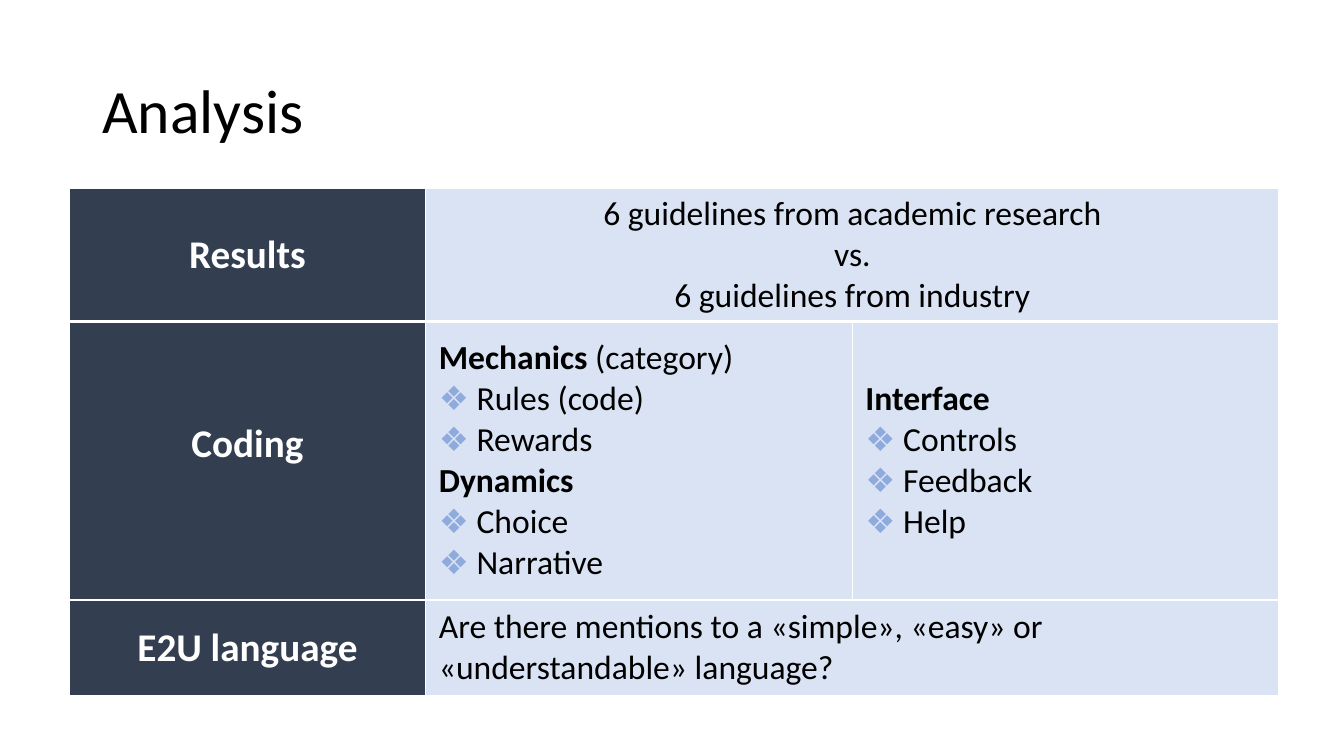
import pptx
import pptx.util
import pptx.dml.color
import pptx.enum.text
import pptx.oxml.ns
import lxml.etree

Cm, Pt = pptx.util.Cm, pptx.util.Pt
ALIGN = pptx.enum.text.PP_ALIGN
MIDDLE = pptx.enum.text.MSO_ANCHOR.MIDDLE
qn = pptx.oxml.ns.qn

FONT = "Calibri"
COLORS = {"dark": "333F50", "light": "DAE3F3", "bullet": "8FAADC",
          "white": "FFFFFF", "black": "000000"}
TITLE = "Analysis"
HEADINGS = ["Results", "Coding", "E2U language"]
RESULTS = ["6 guidelines from academic research", "vs.", "6 guidelines from industry"]
GAME_CODES = [("Mechanics", " (category)", ["Rules (code)", "Rewards"]),
              ("Dynamics", "", ["Choice", "Narrative"])]
INTERFACE_CODES = [("Interface", "", ["Controls", "Feedback", "Help"])]
LANGUAGE = ["Are there mentions to a «simple», «easy» or «understandable» language?"]

COL_WIDTHS = [8.99, 10.75, 10.75]
ROW_HEIGHTS = [3.36, 7.02, 2.42]
INDENT = Cm(0.95)
THIN, THICK = Pt(1), Pt(2.25)
CODING_LIFT = 0.86


def rgb(name):
    return pptx.dml.color.RGBColor.from_string(COLORS[name])


def add_run(p, text, size, color="black", bold=False):
    r = p.add_run()
    r.text = text
    r.font.name, r.font.size, r.font.bold = FONT, Pt(size), bold
    r.font.color.rgb = rgb(color)


def next_paragraph(tf):
    return tf.paragraphs[0] if not tf.paragraphs[0].runs else tf.add_paragraph()


def add_lines(tf, lines, size=24, align=ALIGN.LEFT, color="black", bold=False):
    for line in lines:
        p = next_paragraph(tf)
        p.alignment = align
        add_run(p, line, size, color, bold)


def set_bullet(p):
    pPr = p._p.get_or_add_pPr()
    pPr.set("marL", str(INDENT))
    pPr.set("indent", str(-INDENT))
    clr = lxml.etree.SubElement(pPr, qn("a:buClr"))
    lxml.etree.SubElement(clr, qn("a:srgbClr"), val=COLORS["bullet"])
    lxml.etree.SubElement(pPr, qn("a:buFont"), typeface=FONT)
    lxml.etree.SubElement(pPr, qn("a:buChar"), char="❖")


def add_codes(tf, groups):
    for category, note, codes in groups:
        p = next_paragraph(tf)
        add_run(p, category, 24, bold=True)
        if note:
            add_run(p, note, 24)
        for code in codes:
            p = tf.add_paragraph()
            set_bullet(p)
            add_run(p, code, 24)


def style_cell(cell, row, col):
    widths = {"lnL": THIN, "lnR": THIN,
              "lnT": THICK if row < 2 else THIN,
              "lnB": THIN if row == 1 else THICK}
    tcPr = cell._tc.get_or_add_tcPr()
    for side, width in widths.items():
        ln = lxml.etree.SubElement(tcPr, qn("a:" + side), w=str(width))
        fill = lxml.etree.SubElement(ln, qn("a:solidFill"))
        lxml.etree.SubElement(fill, qn("a:srgbClr"), val=COLORS["white"])
    cell.fill.solid()
    cell.fill.fore_color.rgb = rgb("light" if col else "dark")
    cell.vertical_anchor = MIDDLE
    cell.margin_left = cell.margin_right = Cm(0.33)
    cell.margin_top = cell.margin_bottom = Cm(0.13)


def main():
    prs = pptx.Presentation()
    prs.slide_width, prs.slide_height = Cm(33.87), Cm(19.05)
    s = prs.slides.add_slide(prs.slide_layouts[6])

    tf = s.shapes.add_textbox(Cm(2.33), Cm(1.01), Cm(29.21), Cm(3.68)).text_frame
    tf.word_wrap = True
    tf.vertical_anchor = MIDDLE
    tf.paragraphs[0].line_spacing = 0.9
    add_run(tf.paragraphs[0], TITLE, 44)

    table = s.shapes.add_table(len(ROW_HEIGHTS), len(COL_WIDTHS), Cm(1.74), Cm(4.74),
                               Cm(sum(COL_WIDTHS)), Cm(sum(ROW_HEIGHTS))).table
    for column, width in zip(table.columns, COL_WIDTHS):
        column.width = Cm(width)
    for row, height in zip(table.rows, ROW_HEIGHTS):
        row.height = Cm(height)
    for row in range(len(ROW_HEIGHTS)):
        for col in range(len(COL_WIDTHS)):
            style_cell(table.cell(row, col), row, col)
    for row in (0, 2):
        table.cell(row, 1).merge(table.cell(row, 2))
    table.cell(1, 0).margin_bottom = Cm(0.13 + CODING_LIFT)

    for row, heading in enumerate(HEADINGS):
        add_lines(table.cell(row, 0).text_frame, [heading], 28, ALIGN.CENTER, "white", True)
    add_lines(table.cell(0, 1).text_frame, RESULTS, align=ALIGN.CENTER)
    add_codes(table.cell(1, 1).text_frame, GAME_CODES)
    add_codes(table.cell(1, 2).text_frame, INTERFACE_CODES)
    add_lines(table.cell(2, 1).text_frame, LANGUAGE)

    prs.save("out.pptx")


if __name__ == "__main__":
    main()
